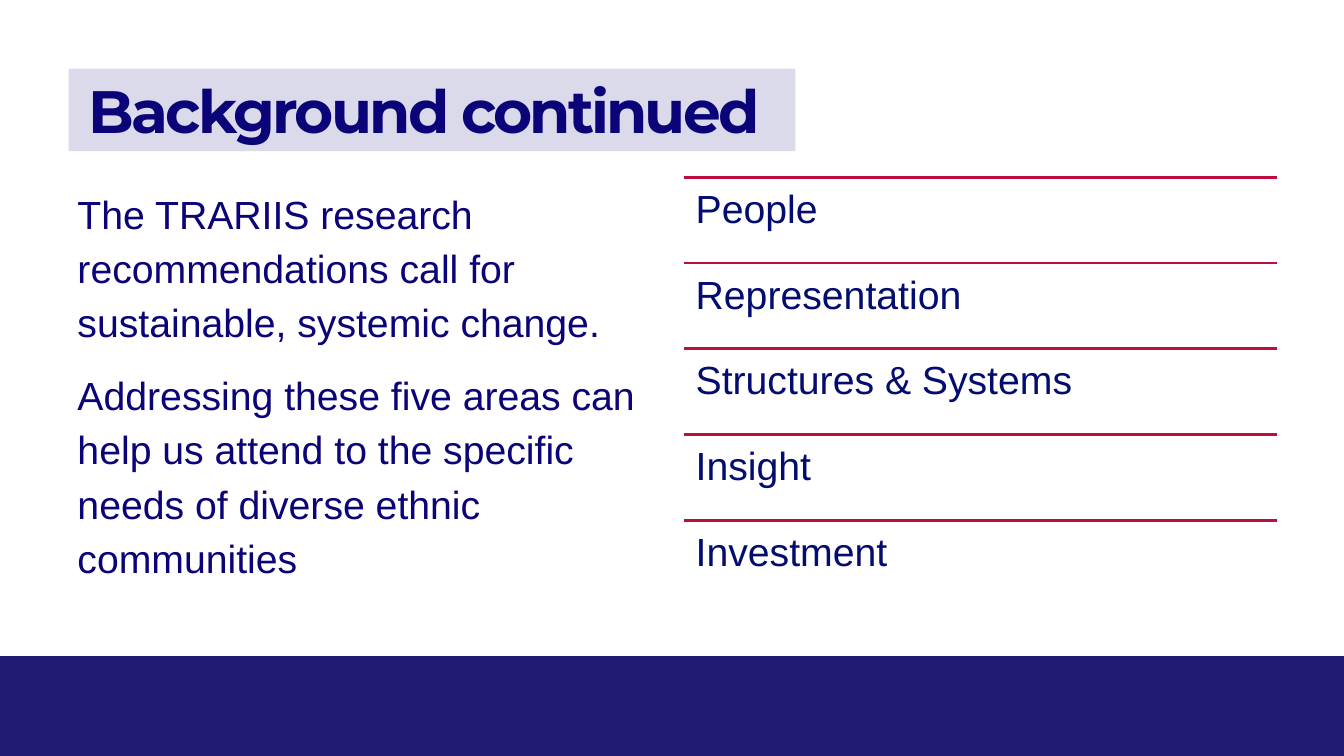
from pptx import Presentation
from pptx.dml.color import RGBColor
from pptx.enum.shapes import MSO_CONNECTOR, MSO_SHAPE
from pptx.enum.text import MSO_ANCHOR, PP_ALIGN
from pptx.oxml import parse_xml
from pptx.oxml.ns import nsdecls
from pptx.util import Inches, Pt


def color(hex_value):
    return RGBColor.from_string(hex_value)


def write(frame, paragraphs, frame_format, paragraph_format, font_format, ink):
    for name, value in frame_format.items():
        setattr(frame, name, value)
    for index, words in enumerate(paragraphs):
        paragraph = frame.paragraphs[0] if index == 0 else frame.add_paragraph()
        for name, value in paragraph_format.items():
            setattr(paragraph, name, value)
        if index > 0:
            paragraph.space_before = Pt(13.5)
        run = paragraph.add_run()
        run.text = words
        for name, value in font_format.items():
            setattr(run.font, name, value)
        run.font.color.rgb = color(ink)


presentation = Presentation()
presentation.slide_width = Inches(13.33)
presentation.slide_height = Inches(7.5)
slide = presentation.slides.add_slide(presentation.slide_layouts[6])
shapes = slide.shapes

footer = shapes.add_shape(
    MSO_SHAPE.RECTANGLE, Inches(0), Inches(6.51), Inches(13.33), Inches(0.99))
heading = shapes.add_shape(
    MSO_SHAPE.RECTANGLE, Inches(0.68), Inches(0.68), Inches(7.21), Inches(0.82))
for band, fill in ((footer, "211B71"), (heading, "DADAEB")):
    band.shadow.inherit = False
    band.fill.solid()
    band.fill.fore_color.rgb = color(fill)
    band.line.fill.background()

write(
    heading.text_frame, ["Background continued"],
    {"margin_left": Inches(0.2), "margin_right": Inches(0.2),
     "word_wrap": False, "vertical_anchor": MSO_ANCHOR.MIDDLE},
    {"alignment": PP_ALIGN.LEFT},
    {"name": "Montserrat", "size": Pt(42.7), "bold": True}, "0A0478")
heading.text_frame.paragraphs[0].runs[0].font._element.set("spc", "-200")

body_font = {"name": "Arial", "size": Pt(28)}
background = shapes.add_textbox(
    Inches(0.67), Inches(1.75), Inches(5.89), Inches(4.25))
write(
    background.text_frame,
    ["The TRARIIS research recommendations call for sustainable, systemic change.",
     "Addressing these five areas can help us attend to the specific needs of "
     "diverse ethnic communities"],
    {"word_wrap": True, "margin_top": Inches(0.07)},
    {"line_spacing": 1.15}, body_font, "0A0478")

areas = ["People", "Representation", "Structures & Systems", "Insight", "Investment"]
area_left, area_width, area_height = 6.78, 5.89, 0.85
area_margins = {f"margin_{side}": Inches(0.12)
                for side in ("left", "top", "right", "bottom")}

for index, area in enumerate(areas):
    top = Inches(1.76 + index * area_height)
    rule = shapes.add_connector(
        MSO_CONNECTOR.STRAIGHT, Inches(area_left), top,
        Inches(area_left + area_width), top)
    rule.line.color.rgb = color("BF0D3E")
    rule.line.width = Pt(2)
    rule._element.spPr.append(parse_xml(f"<a:effectLst {nsdecls('a')}/>"))
    entry = shapes.add_textbox(
        Inches(area_left), top, Inches(area_width), Inches(area_height))
    write(
        entry.text_frame, [area], {"word_wrap": True, **area_margins},
        {"line_spacing": 0.9}, body_font, "030D6F")

presentation.save("out.pptx")
